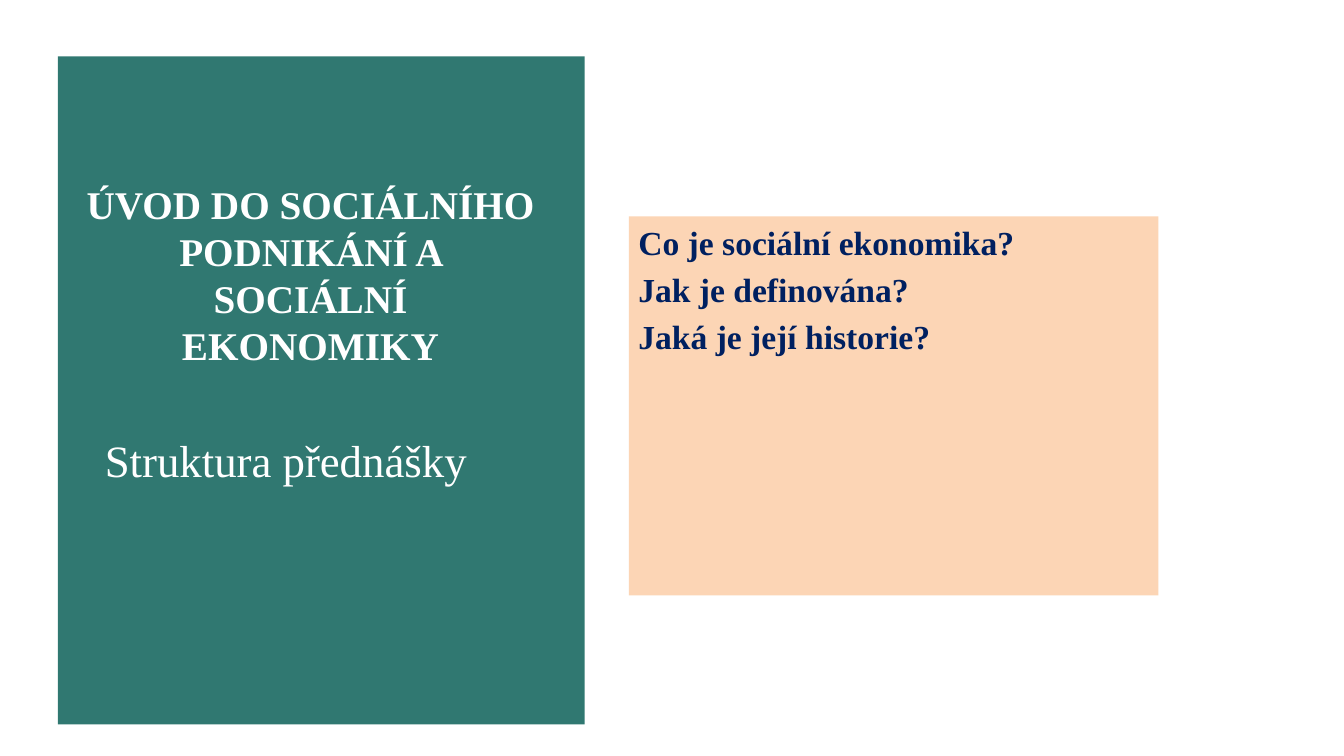
from dataclasses import dataclass
from typing import Optional

import pptx
import pptx.util
import pptx.dml.color
import pptx.enum.shapes
import pptx.enum.text
from pptx.util import Inches, Pt

ALIGN = pptx.enum.text.PP_ALIGN
FONT = "Times New Roman"
WHITE, TEAL, PEACH, NAVY = "FFFFFF", "307871", "FCD5B5", "002060"


@dataclass
class Block:
    left: float
    top: float
    width: float
    height: float
    fill: Optional[str] = None
    lines: tuple[str, ...] = ()
    size: float = 18
    color: str = WHITE
    bold: bool = False
    align: ALIGN = ALIGN.LEFT
    pitch: Optional[float] = None
    gap: float = 0


BLOCKS = (
    Block(0.43, 0.42, 3.92, 4.97, TEAL),
    Block(0.55, 1.3, 3.52, 1.53,
          lines=("ÚVOD DO SOCIÁLNÍHO PODNIKÁNÍ A SOCIÁLNÍ EKONOMIKY",),
          size=21, bold=True, align=ALIGN.CENTER, pitch=25.2),
    Block(4.68, 1.61, 3.94, 2.82, PEACH,
          ("Co je sociální ekonomika?", "Jak je definována?",
           "Jaká je její historie?"),
          color=NAVY, bold=True, gap=3.6),
    Block(0.71, 3.18, 2.96, 0.48, lines=("Struktura přednášky",), size=24),
)


def rgb(code: str) -> pptx.dml.color.RGBColor:
    return pptx.dml.color.RGBColor.from_string(code)


def write(frame, block: Block) -> None:
    frame.word_wrap = True
    frame.vertical_anchor = pptx.enum.text.MSO_ANCHOR.TOP
    frame.margin_left = frame.margin_right = Inches(0.07)
    frame.margin_top = frame.margin_bottom = Inches(0.04)
    for i, line in enumerate(block.lines):
        para = frame.add_paragraph() if i else frame.paragraphs[0]
        para.text = line
        para.alignment = block.align
        if i:
            para.space_before = Pt(block.gap)
        if block.pitch:
            para.line_spacing = Pt(block.pitch)
        para.font.name = FONT
        para.font.size = Pt(block.size)
        para.font.bold = block.bold
        para.font.color.rgb = rgb(block.color)


def draw(slide, block: Block) -> None:
    area = [Inches(n) for n in
            (block.left, block.top, block.width, block.height)]
    if block.fill:
        shape = slide.shapes.add_shape(
            pptx.enum.shapes.MSO_SHAPE.RECTANGLE, *area)
        shape.shadow.inherit = False
        shape.fill.solid()
        shape.fill.fore_color.rgb = rgb(block.fill)
        shape.line.fill.background()
    else:
        shape = slide.shapes.add_textbox(*area)
    if block.lines:
        write(shape.text_frame, block)


def main() -> None:
    deck = pptx.Presentation()
    deck.slide_width = Inches(10)
    deck.slide_height = Inches(10 * 9 / 16)
    slide = deck.slides.add_slide(deck.slide_layouts[6])
    for block in BLOCKS:
        draw(slide, block)
    deck.save("out.pptx")


if __name__ == "__main__":
    main()
